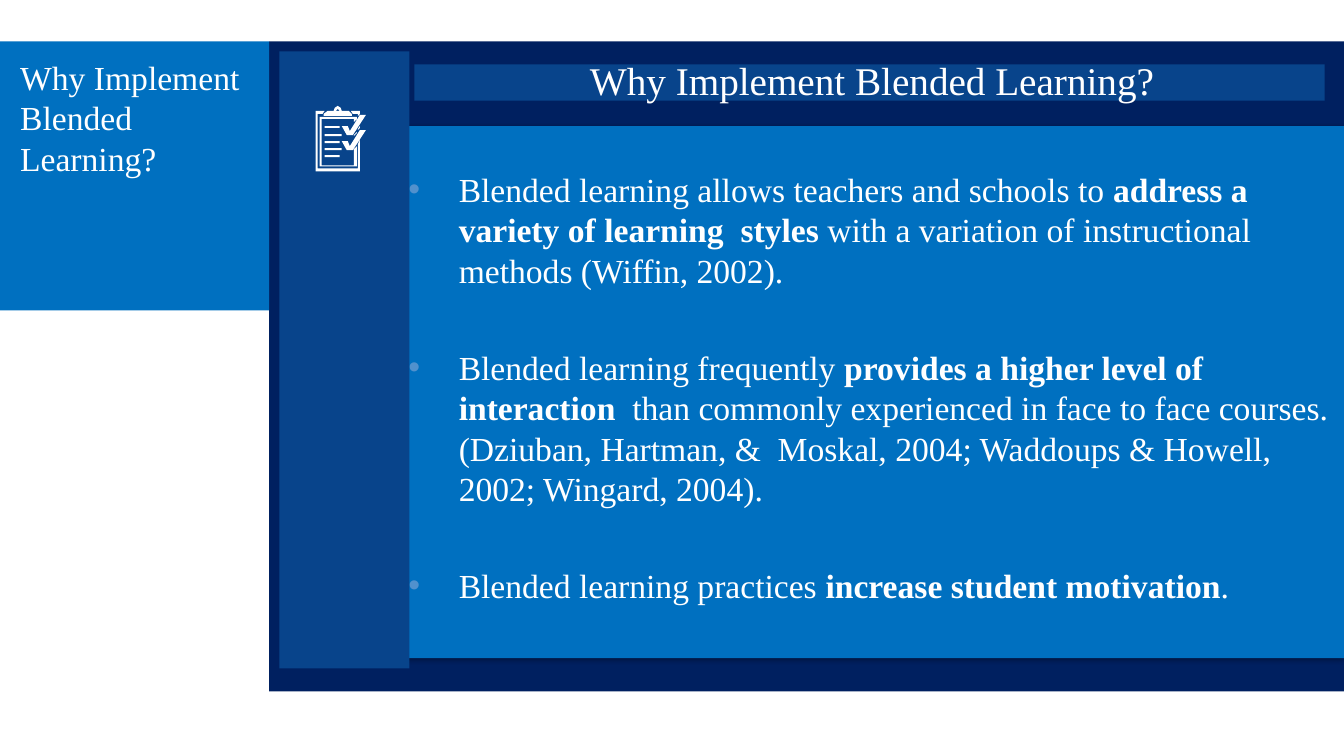
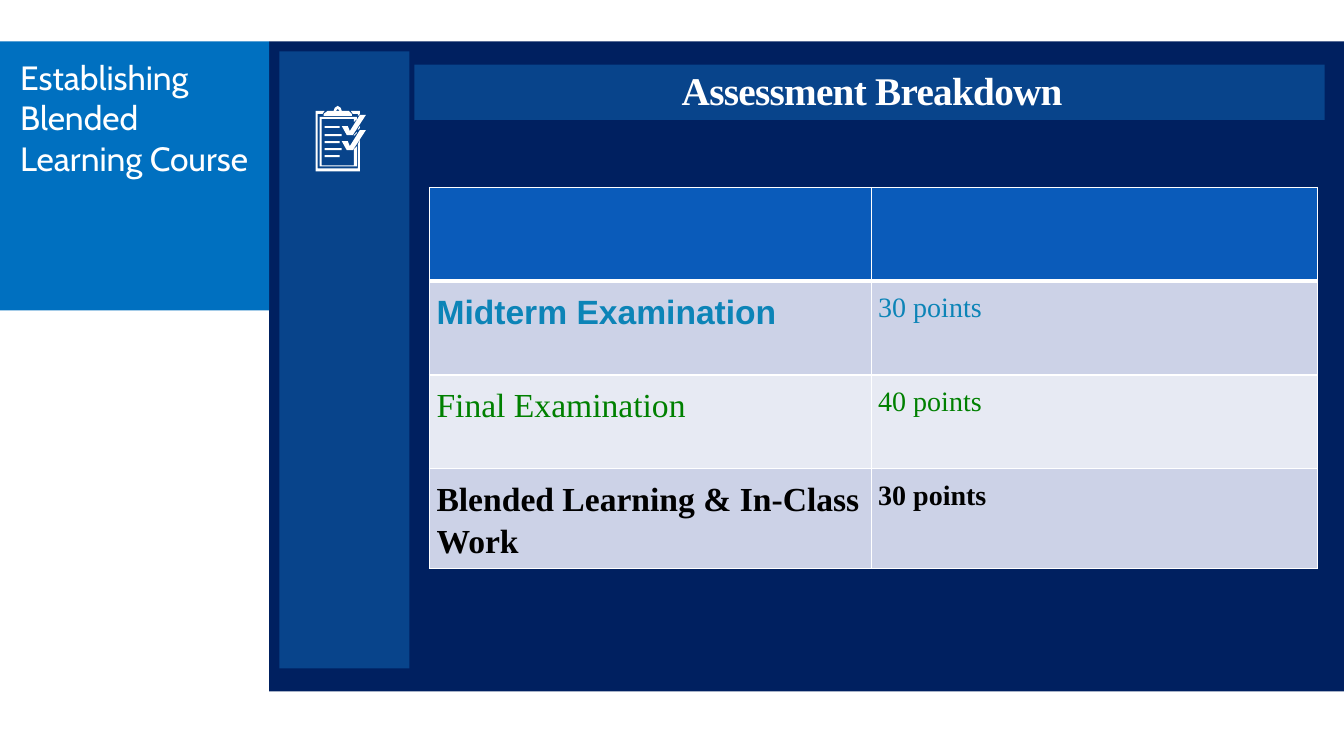
import pptx
import pptx.dml.color
import pptx.enum.shapes
import pptx.enum.text
import pptx.oxml
import pptx.oxml.ns
import pptx.util

Inches, Pt = pptx.util.Inches, pptx.util.Pt
RGB = pptx.dml.color.RGBColor
ANCHOR = pptx.enum.text.MSO_ANCHOR
ALIGN = pptx.enum.text.PP_ALIGN
RECT = pptx.enum.shapes.MSO_SHAPE.RECTANGLE
NSDECL = pptx.oxml.ns.nsdecls("a")

NAVY = RGB(0x00, 0x20, 0x60)
BLUE = RGB(0x00, 0x70, 0xC0)
STEEL = RGB(0x08, 0x44, 0x8B)
HEAD = RGB(0x0A, 0x5B, 0xBA)
DOT = RGB(0x51, 0x91, 0xCD)
TEAL = RGB(0x0C, 0x84, 0xB7)
GREEN = RGB(0x00, 0x80, 0x00)
DARK = RGB(0xCC, 0xD2, 0xE7)
LIGHT = RGB(0xE7, 0xEA, 0xF3)
WHITE = RGB(0xFF, 0xFF, 0xFF)
BLACK = RGB(0x00, 0x00, 0x00)
SERIF = "Times New Roman"


def paint(shape, color, box=None):
    """Give a shape a flat fill, no line, no shadow and, if asked, a place."""
    if box:
        shape.left, shape.top, shape.width, shape.height = map(Inches, box)
    shape.fill.solid()
    shape.fill.fore_color.rgb = color
    shape.line.fill.background()
    shape.shadow.inherit = False
    return shape


def write(para, text, size, color=WHITE, bold=False, face=SERIF):
    run = para.add_run()
    run.text = text
    run.font.size = Pt(size)
    run.font.color.rgb = color
    run.font.bold = bold
    run.font.name = face
    return run


# Clipboard icon, in hundredths of an inch
ICON = [
    [(355, 167), (315, 167), (315, 113), (320, 113), (322, 110),
     (313, 110), (313, 170), (357, 170), (357, 139), (355, 143)],
    [(351, 164), (319, 164), (319, 118), (351, 118), (351, 121), (354, 118),
     (354, 116), (317, 116), (317, 165), (354, 165), (354, 145), (351, 148)],
    [(321, 113), (325, 110), (331, 110), (332, 107), (335, 105), (338, 107),
     (339, 110), (346, 110), (349, 113), (349, 115), (321, 115)],
    [(333, 110), (335, 108), (337, 110)],
    [(357, 113), (357, 110), (348, 110), (350, 113), (355, 113), (355, 115)],
    [(354, 131), (351, 134), (351, 135), (354, 132)],
    [(355, 129), (357, 127), (357, 125), (355, 128)],
]
for top, right in [(125, 337), (133, 339), (140, 337), (147, 339), (154, 337)]:
    ICON.append([(322, top), (right, top), (right, top + 2), (322, top + 2)])
TICK = [(363, 114), (350, 134), (344, 134), (339, 125),
        (345, 125), (347, 130), (357, 114)]
for drop in (0, 15):
    ICON.append([(x, y + drop) for x, y in TICK])

deck = pptx.Presentation()
deck.slide_width, deck.slide_height = Inches(13.33), Inches(7.5)

# Layout, side title and its font, heading, heading height, bold, tracking
PAGES = [
    (1, "Why Implement Blended Learning?", SERIF,
     "Why Implement Blended Learning?", 0.36, False, 0),
    (5, "Establishing Blended Learning Course", "Cabin",
     "Assessment Breakdown", 0.55, True, -50),
]

# Parts that both slides share
for layout, label, face, topic, height, bold, track in PAGES:
    slide = deck.slides.add_slide(deck.slide_layouts[layout])
    shapes = slide.shapes

    panel = paint(shapes.add_shape(RECT, 0, 0, 0, 0), NAVY, (2.67, 0.41, 10.66, 6.45))
    shapes._spTree.insert(2, panel._element)

    title = paint(shapes.title, BLUE, (0, 0.41, 2.67, 2.67))
    frame = title.text_frame
    frame.auto_size = pptx.enum.text.MSO_AUTO_SIZE.NONE
    frame.vertical_anchor = ANCHOR.TOP
    frame.margin_left, frame.margin_top = Inches(0.2), Inches(0.15)
    frame.margin_right, frame.margin_bottom = Inches(0.1), Inches(0.05)
    para = frame.paragraphs[0]
    para.alignment = ALIGN.LEFT
    para.line_spacing = Pt(29)
    write(para, label, 24, face=face)

    paint(shapes.add_shape(RECT, 0, 0, 0, 0), STEEL, (2.77, 0.51, 1.29, 6.12))

    bar = paint(shapes.add_shape(RECT, 0, 0, 0, 0), STEEL, (4.11, 0.64, 9.03, height))
    frame = bar.text_frame
    frame.word_wrap = True
    frame.vertical_anchor = ANCHOR.MIDDLE
    frame.margin_left, frame.margin_top = Inches(0.1), Inches(0.05)
    frame.margin_right, frame.margin_bottom = Inches(0.05), Inches(0.1)
    para = frame.paragraphs[0]
    para.alignment = ALIGN.CENTER
    run = write(para, topic, 28, bold=bold)
    if track:
        run.font._element.set("spc", str(track))

    pen = shapes.build_freeform(*ICON[0][0], scale=Inches(0.01))
    pen.add_line_segments(ICON[0][1:])
    for path in ICON[1:]:
        pen.move_to(*path[0])
        pen.add_line_segments(path[1:])
    paint(pen.convert_to_shape(), WHITE)

# Slide 1: bullet list, with every second run bold
POINTS = [
    ["Blended learning allows teachers and schools to ",
     "address a variety of learning  styles ",
     "with a variation of instructional methods (Wiffin, 2002)."],
    ["Blended learning frequently ",
     "provides a higher level of interaction",
     "  than commonly experienced in face to face courses. (Dziuban, Hartman, "
     "&  Moskal, 2004; Waddoups & Howell, 2002; Wingard, 2004)."],
    ["Blended learning practices ", "increase student motivation", "."],
]
body = paint(deck.slides[0].placeholders[1], BLUE, (4.01, 1.25, 9.32, 5.28))
body._element.spPr.find(pptx.oxml.ns.qn("a:effectLst")).append(pptx.oxml.parse_xml(
    f'<a:outerShdw {NSDECL} blurRad="{Pt(3.1)}" dist="{Pt(1.6)}" dir="5400000" '
    'rotWithShape="0"><a:srgbClr val="000000"><a:alpha val="38000"/></a:srgbClr>'
    '</a:outerShdw>'))
frame = body.text_frame
frame.auto_size = pptx.enum.text.MSO_AUTO_SIZE.NONE
frame.vertical_anchor = ANCHOR.TOP
frame.margin_left, frame.margin_top = Inches(0.04), Inches(0.42)
frame.margin_right = frame.margin_bottom = 0
for i, parts in enumerate(POINTS):
    para = frame.add_paragraph() if i else frame.paragraphs[0]
    props = para._p.get_or_add_pPr()
    props.set("marL", str(Inches(0.5)))
    props.set("indent", str(Inches(-0.5)))
    for item in (f'<a:buClr {NSDECL}><a:srgbClr val="{DOT}"/></a:buClr>',
                 f'<a:buChar {NSDECL} char="•"/>'):
        props.append(pptx.oxml.parse_xml(item))
    para.line_spacing = Pt(29)
    para.space_before = Pt(40 if i else 0)
    for j, part in enumerate(parts):
        write(para, part, 24, bold=j == 1)

# Slide 2: table of points; each row has text, fill, colour, bold, first font
ROWS = [
    (("", ""), HEAD, WHITE, (True, True), SERIF),
    (("Midterm Examination", "30 points"), DARK, TEAL, (True, False), "Arial"),
    (("Final Examination", "40 points"), LIGHT, GREEN, (False, False), SERIF),
    (("Blended Learning & In-Class Work", "30 points"), DARK, BLACK, (True, True), SERIF),
]
grid = deck.slides[1].shapes.add_table(
    len(ROWS), 2, Inches(4.26), Inches(1.86), Inches(8.81), Inches(3.72)).table
grid.columns[0].width, grid.columns[1].width = Inches(4.38), Inches(4.43)
for r, (texts, fill, color, bolds, first) in enumerate(ROWS):
    grid.rows[r].height = Inches(0.93)
    for c, text in enumerate(texts):
        cell = grid.cell(r, c)
        edges = {"L": 1, "R": 1, "T": 3 if r == 1 else 1, "B": 3 if r == 0 else 1}
        props = cell._tc.get_or_add_tcPr()
        for side, width in edges.items():
            props.append(pptx.oxml.parse_xml(
                f'<a:ln{side} {NSDECL} w="{Pt(width)}"><a:solidFill>'
                f'<a:srgbClr val="{WHITE}"/></a:solidFill></a:ln{side}>'))
        cell.fill.solid()
        cell.fill.fore_color.rgb = fill
        cell.margin_left = cell.margin_right = Inches(0.07)
        cell.margin_top = cell.margin_bottom = Inches(0.07)
        if text:
            para = cell.text_frame.paragraphs[0]
            para.line_spacing = 1.15
            write(para, text, 20 if c else 24, color, bolds[c], SERIF if c else first)

deck.save("out.pptx")
